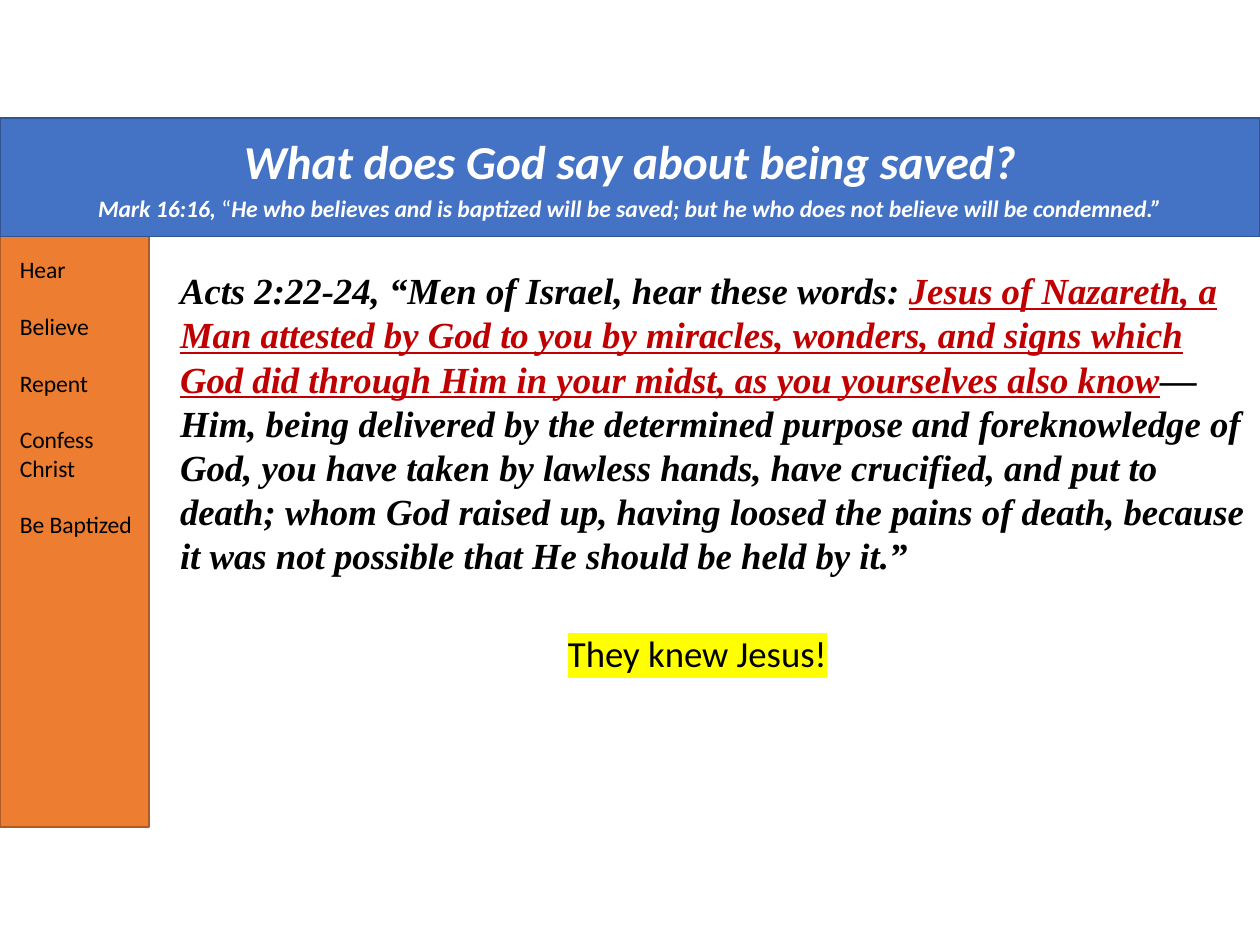
from dataclasses import dataclass

import pptx
import pptx.dml.color
import pptx.enum.shapes
import pptx.enum.text
import pptx.oxml
import pptx.oxml.ns
import pptx.util
from pptx.util import Cm, Pt

RGB = pptx.dml.color.RGBColor.from_string
CENTER = pptx.enum.text.PP_ALIGN.CENTER


@dataclass(frozen=True)
class Theme:
    sans: str = "Calibri"
    serif: str = "Times New Roman"
    header: str = "4472C4"
    header_line: str = "325491"
    sidebar: str = "ED7D31"
    sidebar_line: str = "AF5C24"
    light: str = "FFFFFF"
    dark: str = "000000"
    accent: str = "C00000"
    marker: str = "FFFF00"
    title: float = 27
    body: float = 21
    small: float = 13.5


THEME = Theme()


def add_panel(page, left, top, width, height, fill, line):
    panel = page.shapes.add_shape(
        pptx.enum.shapes.MSO_SHAPE.RECTANGLE, Cm(left), Cm(top), Cm(width), Cm(height)
    )
    panel.shadow.inherit = False
    panel.fill.solid()
    panel.fill.fore_color.rgb = RGB(fill)
    panel.line.color.rgb = RGB(line)
    panel.line.width = Pt(1)
    return panel


def add_text_box(page, left, top, width, height):
    box = page.shapes.add_textbox(Cm(left), Cm(top), Cm(width), Cm(height))
    box.text_frame.word_wrap = True
    return box.text_frame


def style_para(para, size, color, face=THEME.sans, emphasis=False):
    para.font.name = face
    para.font.size = Pt(size)
    para.font.color.rgb = RGB(color)
    para.font.bold = para.font.italic = emphasis


def add_span(para, text):
    span = para.add_run()
    span.text = text
    return span


def add_sidebar(page, left, top, width, height, steps):
    add_panel(page, left, top, width, height, THEME.sidebar, THEME.sidebar_line)
    frame = add_text_box(page, left + 0.15, top + 0.25, width - 0.15, 6.02)
    frame.text = "\n".join(steps)
    for para in frame.paragraphs:
        style_para(para, THEME.small, THEME.dark)
        para.space_after = Pt(16.2)


def add_passage(page, left, top, width, height, opening, stressed, rest):
    para = add_text_box(page, left, top, width, height).paragraphs[0]
    style_para(para, THEME.body, THEME.dark, THEME.serif, True)
    add_span(para, opening)
    span = add_span(para, stressed)
    span.font.color.rgb = RGB(THEME.accent)
    span.font.underline = True
    add_span(para, rest)


def add_conclusion(page, left, top, width, height, text):
    para = add_text_box(page, left, top, width, height).paragraphs[0]
    style_para(para, THEME.body, THEME.dark)
    para.alignment = CENTER
    properties = add_span(para, text).font._element
    highlight = pptx.oxml.parse_xml(
        f'<a:highlight {pptx.oxml.ns.nsdecls("a")}><a:srgbClr val="{THEME.marker}"/></a:highlight>'
    )
    properties.append(highlight)


def add_header(page, left, top, width, height, title, reference, quote):
    panel = add_panel(page, left, top, width, height, THEME.header, THEME.header_line)
    frame = panel.text_frame
    frame.vertical_anchor = pptx.enum.text.MSO_ANCHOR.MIDDLE
    heading, verse = frame.paragraphs[0], frame.add_paragraph()
    for para, size in ((heading, THEME.title), (verse, THEME.small)):
        style_para(para, size, THEME.light, emphasis=True)
        para.alignment = CENTER
    add_span(heading, title)
    heading.space_after = Pt(2.7)
    add_span(verse, reference)
    mark = add_span(verse, "“")
    mark.font.bold = mark.font.italic = False
    add_span(verse, quote)


def main():
    deck = pptx.Presentation()
    deck.slide_width, deck.slide_height = Cm(25.4), Cm(19.05)
    page = deck.slides.add_slide(deck.slide_layouts[6])
    add_sidebar(
        page, 0, 4.77, 3, 11.91,
        ["Hear", "Believe", "Repent", "Confess Christ", "Be Baptized"],
    )
    add_passage(
        page, 3.38, 5.28, 22.02, 6.53,
        "Acts 2:22-24, “Men of Israel, hear these words: ",
        "Jesus of Nazareth, a Man attested by God to you by miracles, wonders, "
        "and signs which God did through Him in your midst, as you yourselves also know",
        "— Him, being delivered by the determined purpose and foreknowledge of God, "
        "you have taken by lawless hands, have crucified, and put to death; whom God "
        "raised up, having loosed the pains of death, because it was not possible "
        "that He should be held by it.”",
    )
    add_conclusion(page, 3.38, 12.6, 21.36, 1.14, "They knew Jesus!")
    add_header(
        page, 0, 2.38, 25.4, 2.39,
        "What does God say about being saved?",
        "Mark 16:16, ",
        "He who believes and is baptized will be saved; "
        "but he who does not believe will be condemned.”",
    )
    deck.save("out.pptx")


if __name__ == "__main__":
    main()
